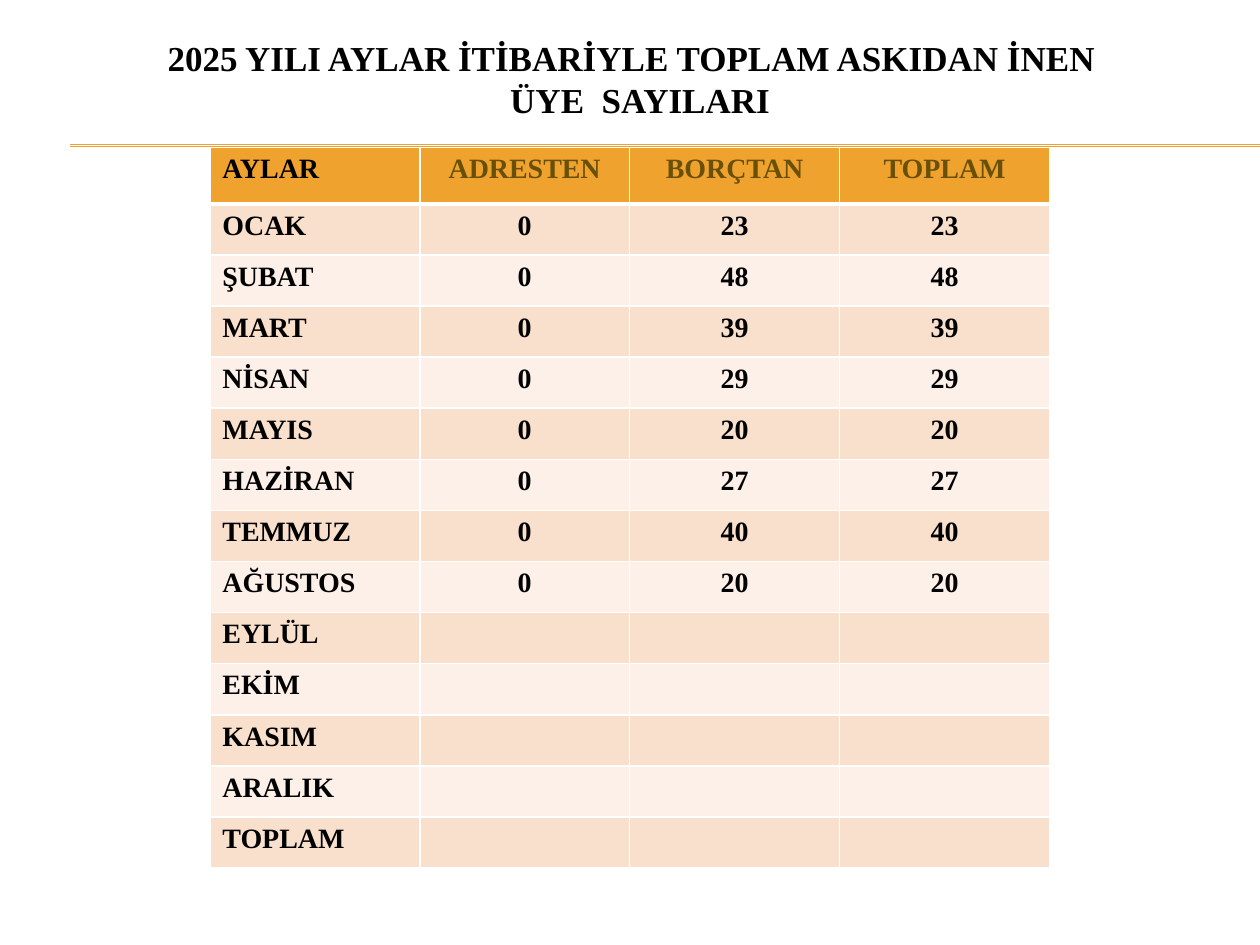
"""Build a slide with a monthly table of members removed from the notice list."""
import dataclasses

import lxml.etree
import pptx
import pptx.dml.color
import pptx.enum.shapes
import pptx.enum.text
import pptx.oxml.ns
import pptx.util

Cm = pptx.util.Cm
Pt = pptx.util.Pt
ALIGN = pptx.enum.text.PP_ALIGN


@dataclasses.dataclass(frozen=True)
class Theme:
    font: str = "Times New Roman"
    title_size: float = 20
    table_size: float = 16
    text: str = "000000"
    header_text: str = "695008"
    accent: str = "F0A22E"
    bands: tuple = ("F9E0CD", "FCF0E8")
    border: str = "FFFFFF"
    border_width: float = 1
    header_border_width: float = 3
    rule_width: float = 0.75


THEME = Theme()
TITLE_LINES = ("2025 YILI AYLAR İTİBARİYLE TOPLAM ASKIDAN İNEN  ", "ÜYE  SAYILARI")
HEADERS = ("AYLAR", "ADRESTEN", "BORÇTAN", "TOPLAM")
MONTHS = ("OCAK", "ŞUBAT", "MART", "NİSAN", "MAYIS", "HAZİRAN", "TEMMUZ",
          "AĞUSTOS", "EYLÜL", "EKİM", "KASIM", "ARALIK")
FROM_DEBT = (23, 48, 39, 29, 20, 27, 40, 20)


def rgb(value):
    return pptx.dml.color.RGBColor.from_string(value)


def add_run(paragraph, text, size, color):
    run = paragraph.add_run()
    run.text = text
    run.font.name = THEME.font
    run.font.size = Pt(size)
    run.font.bold = True
    run.font.color.rgb = rgb(color)


def add_rule(slide, top):
    rule = slide.shapes.add_connector(
        pptx.enum.shapes.MSO_CONNECTOR.STRAIGHT, Cm(1.42), top, Cm(25.4), top)
    rule.line.color.rgb = rgb(THEME.accent)
    rule.line.width = Pt(THEME.rule_width)
    lxml.etree.SubElement(rule._element.spPr, pptx.oxml.ns.qn("a:effectLst"))


def add_title(slide):
    box = slide.shapes.add_textbox(Cm(0.84), Cm(0.41), Cm(24.13), Cm(2.34))
    frame = box.text_frame
    frame.word_wrap = True
    frame.vertical_anchor = pptx.enum.text.MSO_ANCHOR.MIDDLE
    paragraph = frame.paragraphs[0]
    paragraph.alignment = ALIGN.CENTER
    for index, line in enumerate(TITLE_LINES):
        if index:
            paragraph.add_line_break()
        add_run(paragraph, line, THEME.title_size, THEME.text)


def set_borders(cell, top, bottom):
    properties = cell._tc.get_or_add_tcPr()
    side = THEME.border_width
    widths = {"a:lnL": side, "a:lnR": side, "a:lnT": top, "a:lnB": bottom}
    for index, (tag, width) in enumerate(widths.items()):
        line = lxml.etree.Element(pptx.oxml.ns.qn(tag), w=str(Pt(width)))
        fill = lxml.etree.SubElement(line, pptx.oxml.ns.qn("a:solidFill"))
        lxml.etree.SubElement(fill, pptx.oxml.ns.qn("a:srgbClr"), val=THEME.border)
        properties.insert(index, line)


def fill_cell(cell, text, row, column):
    header = row == 0
    cell.margin_bottom = 0
    cell.fill.solid()
    cell.fill.fore_color.rgb = rgb(THEME.accent if header else THEME.bands[(row - 1) % 2])
    set_borders(
        cell,
        THEME.header_border_width if row == 1 else THEME.border_width,
        THEME.header_border_width if header else THEME.border_width)
    if text:
        paragraph = cell.text_frame.paragraphs[0]
        paragraph.alignment = ALIGN.CENTER if column else ALIGN.LEFT
        color = THEME.header_text if header and column else THEME.text
        add_run(paragraph, text, THEME.table_size, color)


def table_rows():
    counted = [(month, "0", str(count), str(count))
               for month, count in zip(MONTHS, FROM_DEBT)]
    pending = [(label, "", "", "") for label in MONTHS[len(FROM_DEBT):] + ("TOPLAM",)]
    return [HEADERS] + counted + pending


def add_month_table(slide):
    rows = table_rows()
    header_height, row_height = Cm(1.14), Cm(1.03)
    height = header_height + row_height * (len(rows) - 1)
    table = slide.shapes.add_table(
        len(rows), len(HEADERS), Cm(4.23), Cm(2.97), Cm(16.93), height).table
    for row, values in enumerate(rows):
        table.rows[row].height = row_height if row else header_height
        for column, text in enumerate(values):
            fill_cell(table.cell(row, column), text, row, column)


def main():
    presentation = pptx.Presentation()
    presentation.slide_width = Cm(25.4)
    presentation.slide_height = Cm(19.05)
    slide = presentation.slides.add_slide(presentation.slide_layouts[6])
    for top in (Cm(2.92), Cm(2.95)):
        add_rule(slide, top)
    add_month_table(slide)
    add_title(slide)
    presentation.save("out.pptx")


if __name__ == "__main__":
    main()
